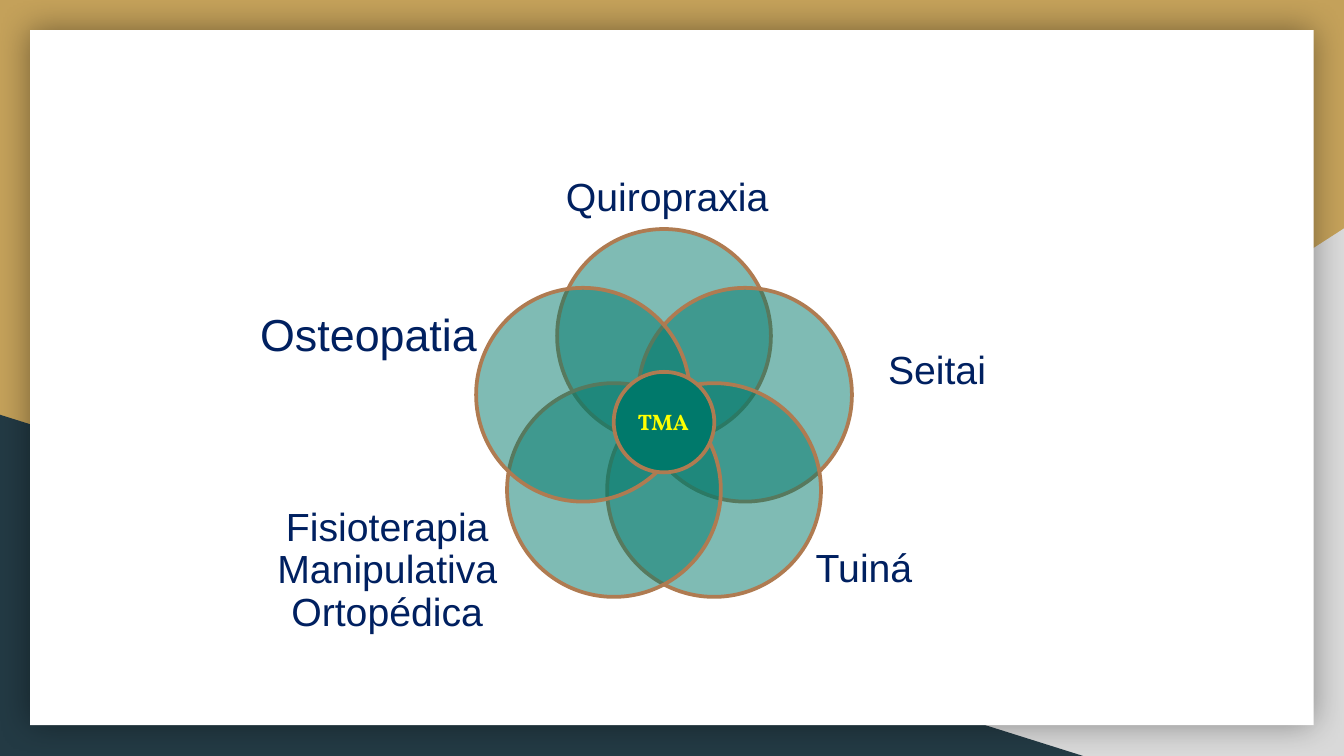
from math import cos, radians, sin

from lxml import etree
from pptx import Presentation
from pptx.dml.color import RGBColor
from pptx.enum.shapes import MSO_SHAPE
from pptx.enum.text import MSO_ANCHOR, PP_ALIGN
from pptx.oxml import parse_xml
from pptx.oxml.ns import qn
from pptx.util import Cm, Pt

OVAL = MSO_SHAPE.OVAL
RECT = MSO_SHAPE.RECTANGLE
WEDGE = MSO_SHAPE.RIGHT_TRIANGLE
MIDDLE = MSO_ANCHOR.MIDDLE
CENTER = PP_ALIGN.CENTER
NS = "http://schemas.openxmlformats.org/drawingml/2006/main"

deck = Presentation()
deck.slide_width, deck.slide_height = Cm(25.4), Cm(14.29)
slide = deck.slides.add_slide(deck.slide_layouts[6])
back = slide.background.fill
back.solid()
back.fore_color.rgb = RGBColor.from_string("C4A15A")


def draw(kind, box, color, line=None):
    shape = slide.shapes.add_shape(kind, *[Cm(v) for v in box])
    shape.shadow.inherit = False
    shape.fill.solid()
    shape.fill.fore_color.rgb = RGBColor.from_string(color)
    if line:
        shape.line.color.rgb = RGBColor.from_string(line)
        shape.line.width = Pt(2)
    else:
        shape.line.fill.background()
    return shape


def write(box, text, size, font, color, bold=False):
    frame = slide.shapes.add_textbox(*[Cm(v) for v in box]).text_frame
    frame.word_wrap = True
    run = frame.paragraphs[0].add_run()
    run.text = text
    run.font.size = Pt(size)
    run.font.name = font
    run.font.bold = bold
    run.font.color.rgb = RGBColor.from_string(color)
    return frame


gray = draw(WEDGE, (9.96, 4.32, 15.44, 9.97), "D9D9D9")
gray._element.spPr.find(qn("a:xfrm")).set("flipH", "1")
draw(WEDGE, (0, 7.84, 20.47, 6.45), "233A44")

card = draw(RECT, (0.57, 0.57, 24.26, 13.14), "FFFFFF")
glow = card._element.spPr.find(qn("a:effectLst"))
glow.append(parse_xml(
    f'<a:outerShdw xmlns:a="{NS}" blurRad="{Pt(18)}" dist="0" dir="0" '
    'algn="ctr" rotWithShape="0"><a:srgbClr val="000000">'
    '<a:alpha val="40000"/></a:srgbClr></a:outerShdw>'))

mid_x, mid_y = 12.55, 7.96
ring, wide = 1.61, 4.04
labels = [
    ("Quiropraxia", 21, (10.26, 2.39, 4.7, 2.72)),
    ("Seitai", 21, (15.6, 5.56, 4.22, 2.95)),
    ("Tuiná", 21, (14.22, 9.3, 4.22, 2.95)),
    ("Fisioterapia Manipulativa Ortopédica", 21, (5.2, 9.32, 4.24, 2.95)),
    ("Osteopatia", 24, (4.83, 4.9, 4.27, 2.95)),
]
for i, (text, size, box) in enumerate(labels):
    turn = radians(72 * i - 90)
    left = mid_x + ring * cos(turn) - wide / 2
    top = mid_y + ring * sin(turn) - wide / 2
    petal = draw(OVAL, (left, top, wide, wide), "00796B", "AF7B51")
    tint = petal._element.spPr.find(qn("a:solidFill"))[0]
    etree.SubElement(tint, qn("a:alpha")).set("val", "50000")

    frame = write(box, text, size, "Arial", "002060")
    frame.margin_left = frame.margin_right = 0
    frame.margin_top = frame.margin_bottom = 0
    frame.vertical_anchor = MIDDLE
    frame.paragraphs[0].alignment = CENTER
    frame.paragraphs[0].line_spacing = 0.9

core = 1.9
draw(OVAL, (mid_x - core / 2, 7.03, core, core), "00796B", "AF7B51")
write((11.8, 7.59, 1.6, 0.76), "TMA", 12, "Vollkorn", "FFFF00", True)

deck.save("out.pptx")
